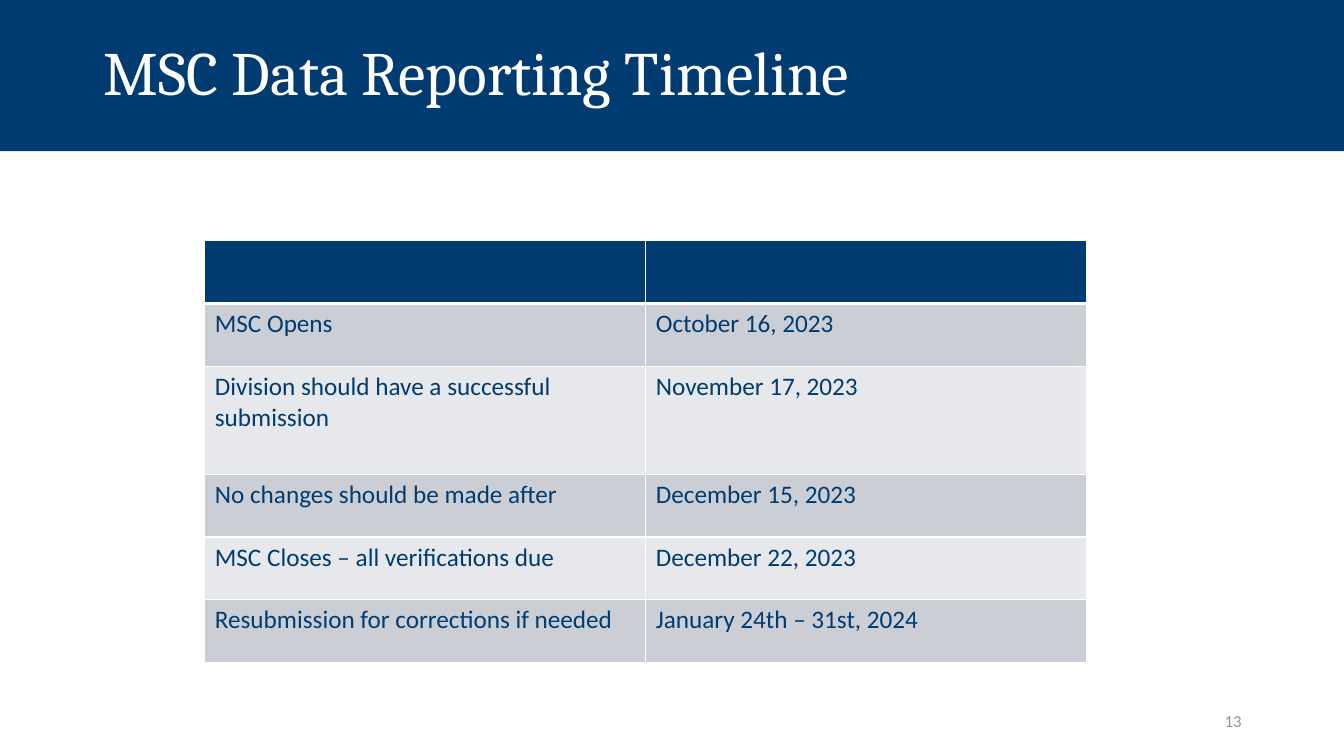
import pptx
import pptx.dml.color
import pptx.enum.shapes
import pptx.enum.text
import pptx.oxml
import pptx.oxml.ns
import pptx.util

Pt = pptx.util.Pt
RGB = pptx.dml.color.RGBColor
Align = pptx.enum.text.PP_ALIGN
Anchor = pptx.enum.text.MSO_ANCHOR

NAVY = RGB(0x00, 0x3C, 0x71)
WHITE = RGB(0xFF, 0xFF, 0xFF)
GREY = RGB(0x8C, 0x92, 0xA5)
DARK = RGB(0xCC, 0xCE, 0xD5)
LIGHT = RGB(0xE7, 0xE8, 0xEB)

WIDTH, HEIGHT = 960, 540
DATES = [
    ("", ""),
    ("MSC Opens", "October 16, 2023"),
    ("Division should have a successful submission", "November 17, 2023"),
    ("No changes should be made after", "December 15, 2023"),
    ("MSC Closes – all verifications due", "December 22, 2023"),
    ("Resubmission for corrections if needed", "January 24th – 31st, 2024"),
]
ROW, TALL = 44.8, 77.2
HEIGHTS = [ROW, ROW, TALL, ROW, ROW, ROW]


def write(frame, text, font="Calibri", size=18, color=NAVY,
          align=Align.LEFT, space=1.0):
    para = frame.paragraphs[0]
    para.alignment = align
    para.line_spacing = space
    for face in (para.font, para.add_run().font if text else para.font):
        face.name, face.size = font, Pt(size)
        face.color.rgb = color
    if text:
        para.runs[0].text = text


def edge(cell, side, width):
    """Draw one white border; side is L, R, T or B."""
    cell._tc.get_or_add_tcPr().append(pptx.oxml.parse_xml(
        f'<a:ln{side} {pptx.oxml.ns.nsdecls("a")} w="{Pt(width)}">'
        f'<a:solidFill><a:srgbClr val="{WHITE}"/></a:solidFill></a:ln{side}>'))


class Deck:
    def __init__(self):
        self.file = pptx.Presentation()
        self.file.slide_width, self.file.slide_height = Pt(WIDTH), Pt(HEIGHT)
        self.slide = self.file.slides.add_slide(self.file.slide_layouts[6])

    def banner(self, text, height, indent):
        box = self.slide.shapes.add_shape(
            pptx.enum.shapes.MSO_SHAPE.RECTANGLE, 0, 0, Pt(WIDTH), Pt(height))
        box.shadow.inherit = False
        box.fill.solid()
        box.fill.fore_color.rgb = NAVY
        box.line.fill.background()
        frame = box.text_frame
        frame.margin_left = Pt(indent)
        frame.vertical_anchor = Anchor.MIDDLE
        write(frame, text, font="Cambria", size=44, color=WHITE, space=0.9)

    def label(self, text, left, top, width, height, **style):
        frame = self.slide.shapes.add_textbox(
            Pt(left), Pt(top), Pt(width), Pt(height)).text_frame
        frame.word_wrap = True
        frame.vertical_anchor = Anchor.MIDDLE
        write(frame, text, **style)

    def table(self, rows, heights, left, top, width):
        grid = self.slide.shapes.add_table(
            len(rows), len(rows[0]), Pt(left), Pt(top),
            Pt(width), Pt(sum(heights))).table
        grid.horz_banding = False
        for i, (texts, height) in enumerate(zip(rows, heights)):
            grid.rows[i].height = Pt(height)
            shade = NAVY if i == 0 else DARK if i % 2 else LIGHT
            for j, text in enumerate(texts):
                cell = grid.cell(i, j)
                edge(cell, "L", 1)
                edge(cell, "R", 1)
                edge(cell, "T", 3 if i == 1 else 1)
                edge(cell, "B", 3 if i == 0 else 1)
                cell.fill.solid()
                cell.fill.fore_color.rgb = shade
                write(cell.text_frame, text)


def main():
    deck = Deck()
    deck.label("13", 678, 500.5, 216, 28.8, size=12, color=GREY,
               align=Align.RIGHT)
    deck.banner("MSC Data Reporting Timeline", 108, 74)
    deck.table(DATES, HEIGHTS, 146.3, 172, 630)
    deck.file.save("out.pptx")


if __name__ == "__main__":
    main()
